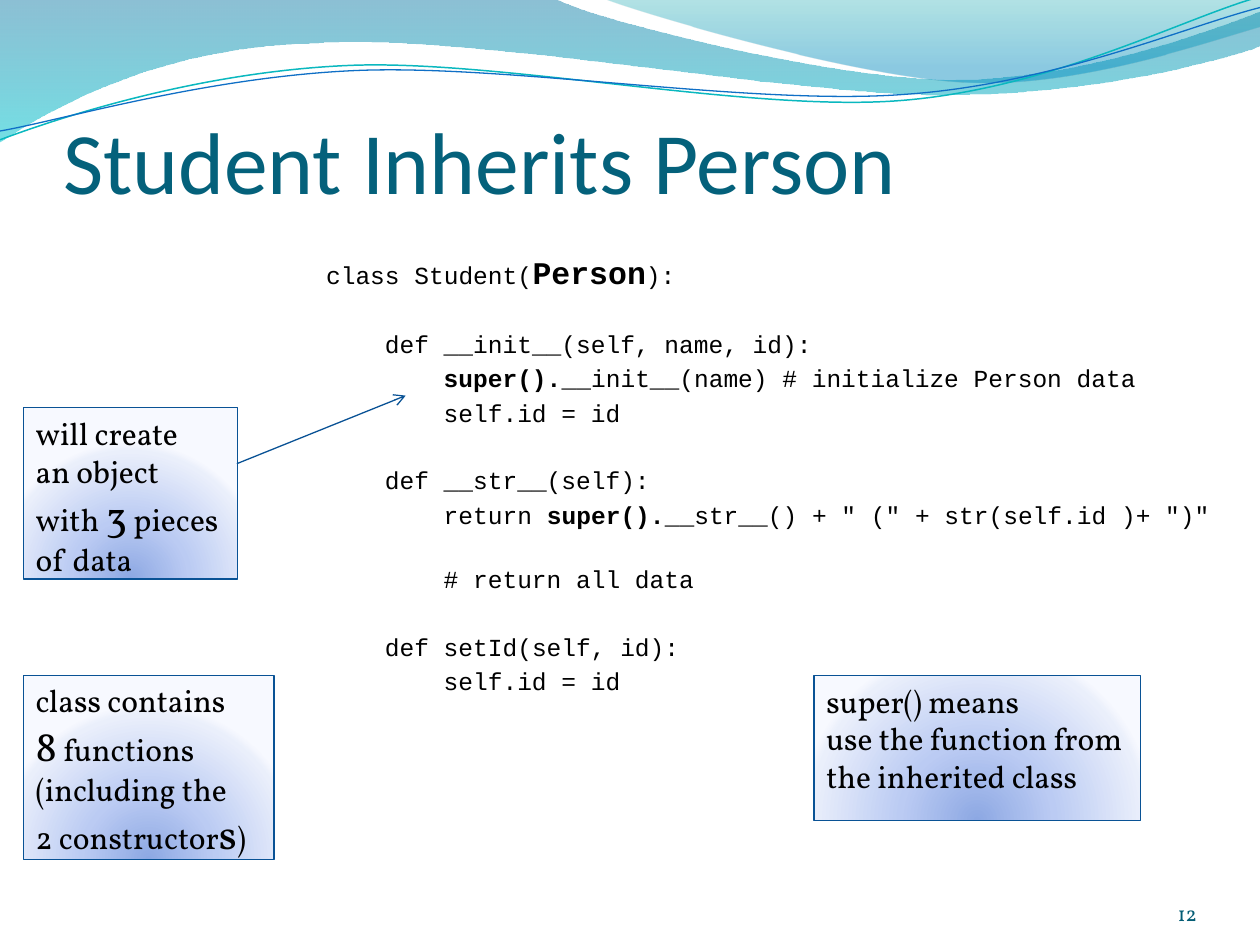
import lxml.etree
import pptx
import pptx.dml.color
import pptx.enum.shapes
import pptx.enum.text
import pptx.oxml
import pptx.oxml.ns
import pptx.util

CELL = 0.1  # inches; the slide is a grid of 100 columns by 75 rows
COLS, ROWS = 100, 75
PATH_UNITS = 100  # path units in a cell
ANCHOR = pptx.enum.text.MSO_ANCHOR
ALIGN = pptx.enum.text.PP_ALIGN
qn = pptx.oxml.ns.qn

TEAL, BORDER, BLACK = "04617B", "095295", "000000"
CALLOUT_STOPS = [(0, "8DA8E3", 100), (43, "BBCBF3", 100),
                 (93, "EAEFFB", 100), (100, "F7F9FF", 100)]
DOWNWARD = '<a:lin ang="5400000" scaled="0"/>'
FROM_BELOW = ('<a:path path="circle"><a:fillToRect l="50000" t="130000" '
              'r="50000" b="-30000"/></a:path>')

# A wave is a start point and its segments: 2 numbers a line, 6 a Bezier curve.
BACK_WAVE = (0, 0), [
    (44, -0.1), (47.6, 1.7, 66.4, 6.3, 75.8, 6.3), (85.3, 6.3, 95.8, 2.6, 100, 0.9),
    (100.1, 3.6), (98.3, 4.4, 87, 7.6, 74.6, 7.5), (62.2, 7.5, 38.2, 2.8, 25.7, 3.4),
    (12.9, 3.6, 4.6, 8.3, -0.1, 11.3)]
FRONT_WAVE = (47.9, -0.1), [
    (50.9, 1.1, 68.2, 6.2, 76.9, 6.5), (85.6, 6.9, 96.1, 3.2, 100, 2.1), (100, 0)]
TEAL_CURVE = (0, 11.1), [
    (4.8, 9.3, 15.8, 5.7, 27.7, 5.2), (39.5, 4.7, 59.3, 8.9, 71.3, 8),
    (83.3, 7.1, 93.8, 1.5, 99.8, -0.2)]
BLUE_CURVE = (0, 10.4), [
    (4.7, 9.6, 16.4, 6.1, 28.3, 5.6), (40.3, 5.1, 59.7, 8.4, 71.7, 7.5),
    (83.6, 6.7, 94.1, 2.1, 100, 0.6)]

FIRST_GAP, LINE_GAP, BLANK_GAP, WRAP_GAP = 3.8, 2.8, 21.8, 20
INDENT = pptx.util.Pt(33.6)  # four characters of 14 pt Courier New
BOLD = {"bold": True}
# Space before, indent level, runs
CODE = [
    (FIRST_GAP, 0, ["class Student(", ("Person", {"bold": True, "size": 18}), "):"]),
    (BLANK_GAP, 1, ["def __init__(self, name, id):"]),
    (LINE_GAP, 2, [("super().", BOLD), "__init__(name) # initialize Person data"]),
    (LINE_GAP, 2, ["self.id = id"]),
    (BLANK_GAP, 1, ["def __str__(self):"]),
    (LINE_GAP, 2, ["return ", ("super().", BOLD),
                   '__str__() + " (" + str(self.id )+ ")"']),
    (WRAP_GAP, 2, ["# return all data"]),
    (BLANK_GAP, 1, ["def setId(self, id):"]),
    (LINE_GAP, 2, ["self.id = id"]),
]

BIG = {"size": 24}
CALLOUTS = [
    ((1.85, 32.35, 17, 13.6),
     [["will create"], ["an object"], ["with ", ("3", BIG), " pieces"], ["of data"]]),
    ((1.85, 53.6, 19.9, 14.6),
     [["class contains"], [("8", BIG), " functions"], ["(including the"],
      ["2 constructor", ("s", BIG), ")"]]),
    ((64.6, 53.6, 25.9, 11.5),
     [["super() means"], ["use the function from"], ["the inherited class"]]),
]


def cells(*numbers):
    return [pptx.util.Inches(n * CELL) for n in numbers]


def color(value):
    return pptx.dml.color.RGBColor.from_string(value)


def add_text(p, runs, **base):
    """Add runs, each a string or (string, changes to the base format)."""
    for run in runs:
        text, changes = (run, {}) if isinstance(run, str) else run
        fmt = {**base, **changes}
        r = p.add_run()
        r.text = text
        r.font.name = fmt["font"]
        r.font.size = pptx.util.Pt(fmt["size"])
        r.font.bold = fmt.get("bold", False)
        r.font.color.rgb = color(fmt.get("color", BLACK))


def set_frame(tf, anchor, margins=(0.1, 0.05, 0.1, 0.05)):
    tf.word_wrap = True
    tf.auto_size = pptx.enum.text.MSO_AUTO_SIZE.NONE
    tf.vertical_anchor = anchor
    (tf.margin_left, tf.margin_top,
     tf.margin_right, tf.margin_bottom) = map(pptx.util.Inches, margins)


def set_gradient(shape, stops, direction):
    """Fill with stops of (position, colour, opacity), all in percent."""
    shape.fill.background()
    marks = "".join(
        f'<a:gs pos="{pos * 1000}"><a:srgbClr val="{rgb}">'
        f'<a:alpha val="{opacity * 1000}"/></a:srgbClr></a:gs>'
        for pos, rgb, opacity in stops)
    grad = pptx.oxml.parse_xml(
        f'<a:gradFill {pptx.oxml.ns.nsdecls("a")} rotWithShape="1">'
        f'<a:gsLst>{marks}</a:gsLst>{direction}</a:gradFill>')
    spPr = shape._element.spPr
    spPr.replace(spPr.find(qn("a:noFill")), grad)


def set_line(shape, rgb, width):
    shape.line.color.rgb = color(rgb)
    shape.line.width = pptx.util.Pt(width)


def add_wave(s, box, wave, closed):
    """Build the outline through its nodes, then bend its curved segments."""
    def units(numbers):
        return [(round((box[0] + x) * PATH_UNITS), round((box[1] + y) * PATH_UNITS))
                for x, y in zip(numbers[::2], numbers[1::2])]

    start, segments = units(wave[0])[0], [units(seg) for seg in wave[1]]
    nodes = [start] + [seg[-1] for seg in segments]
    builder = s.shapes.build_freeform(
        *start, scale=pptx.util.Inches(CELL) / PATH_UNITS)
    builder.add_line_segments(nodes[1:], close=closed)
    shape = builder.convert_to_shape()
    shape.shadow.inherit = False
    left, top = (min(axis) for axis in zip(*nodes))
    lines = list(shape._element.iter(qn("a:lnTo")))
    for line, seg in zip(lines, segments):
        if len(seg) == 3:
            curve = lxml.etree.Element(qn("a:cubicBezTo"))
            for x, y in seg:
                lxml.etree.SubElement(curve, qn("a:pt"), x=str(x - left), y=str(y - top))
            line.getparent().replace(line, curve)
    return shape


def add_header(s, box):
    for wave, stops in (
            (BACK_WAVE, [(0, "0074A1", 45), (100, "00C6CF", 55)]),
            (FRONT_WAVE, [(0, "00A1A9", 30), (80, "008BBF", 45)])):
        shape = add_wave(s, box, wave, True)
        set_gradient(shape, stops, DOWNWARD)
        shape.line.fill.background()
    for wave, rgb, width in ((TEAL_CURVE, "0AB8BF", 0.85), (BLUE_CURVE, "0F6FC6", 0.75)):
        shape = add_wave(s, box, wave, False)
        shape.fill.background()
        set_line(shape, rgb, width)


def add_title(s, box, text):
    title = s.shapes.title
    title.left, title.top, title.width, title.height = cells(*box)
    set_frame(title.text_frame, ANCHOR.BOTTOM, (0, 0.05, 0, 0))
    p = title.text_frame.paragraphs[0]
    p.alignment = ALIGN.LEFT
    add_text(p, [text], font="Calibri", size=50, color=TEAL)


def add_code(s, box):
    tf = s.shapes.add_textbox(*cells(*box)).text_frame
    set_frame(tf, ANCHOR.TOP)
    for i, (gap, level, runs) in enumerate(CODE):
        p = tf.add_paragraph() if i else tf.paragraphs[0]
        p.space_before = pptx.util.Pt(gap)
        p._p.get_or_add_pPr().set("marL", str(level * INDENT))
        add_text(p, runs, font="Courier New", size=14)


def add_page_number(s, box, number):
    tf = s.shapes.add_textbox(*cells(*box)).text_frame
    set_frame(tf, ANCHOR.BOTTOM, (0, 0, 0, 0))
    tf.paragraphs[0].alignment = ALIGN.RIGHT
    add_text(tf.paragraphs[0], [number], font="Vollkorn", size=12, color="045D75")


def add_callout(s, box, lines):
    shape = s.shapes.add_shape(pptx.enum.shapes.MSO_SHAPE.RECTANGLE, *cells(*box))
    set_gradient(shape, CALLOUT_STOPS, FROM_BELOW)
    set_line(shape, BORDER, 0.75)
    shape.shadow.inherit = False
    tf = shape.text_frame
    set_frame(tf, ANCHOR.TOP)
    for i, runs in enumerate(lines):
        p = tf.add_paragraph() if i else tf.paragraphs[0]
        p.alignment = ALIGN.LEFT
        add_text(p, runs, font="Vollkorn", size=18)


def add_arrow(s, start, end):
    arrow = s.shapes.add_connector(
        pptx.enum.shapes.MSO_CONNECTOR.STRAIGHT, *cells(*start, *end))
    set_line(arrow, BORDER, 0.75)
    lxml.etree.SubElement(arrow.line._get_or_add_ln(), qn("a:tailEnd"), type="arrow")
    lxml.etree.SubElement(arrow._element.spPr, qn("a:effectLst"))


def main():
    prs = pptx.Presentation()
    prs.slide_width, prs.slide_height = cells(COLS, ROWS)
    s = prs.slides.add_slide(prs.slide_layouts[5])
    add_header(s, (0, 0))
    add_title(s, (5, 4.3, 90, 12.5), "Student Inherits Person")
    add_code(s, (24.9, 19.6, 73.3, 47.6))
    add_page_number(s, (86.7, 69.5, 8.3, 4), "12")
    for box, lines in CALLOUTS:
        add_callout(s, box, lines)
    add_arrow(s, (18.8, 36.8), (32.2, 31.4))
    prs.save("out.pptx")


if __name__ == "__main__":
    main()
